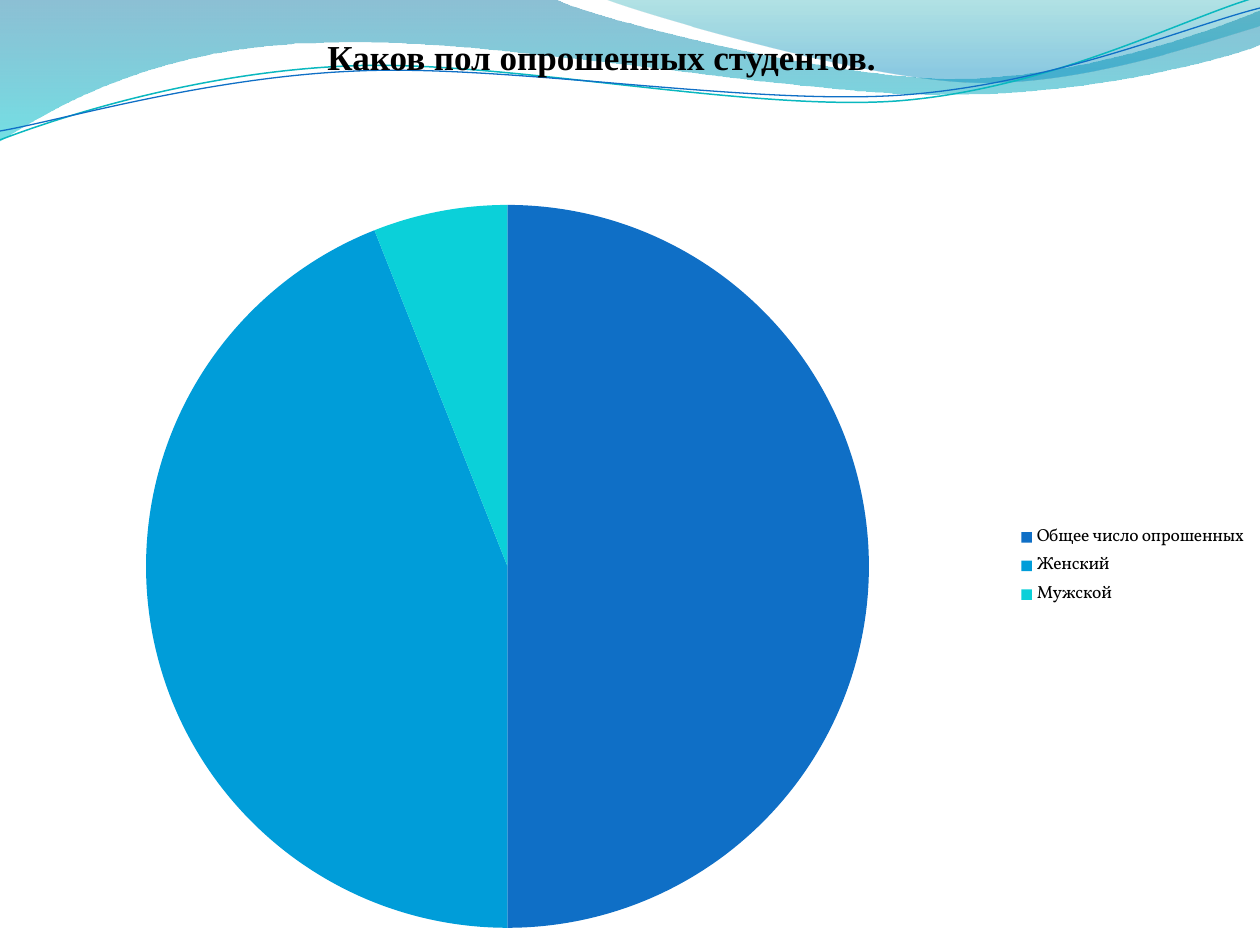
import math

from lxml import etree
from pptx import Presentation
from pptx import util as u
from pptx.chart.data import CategoryChartData
from pptx.dml.color import RGBColor
from pptx.enum import chart as ch, text
from pptx.oxml import parse_xml
from pptx.oxml.ns import nsdecls, qn

PX = 914400 // 126
TILT = -2.7
THEME = {
    "title": {"name": "Times New Roman", "size": u.Pt(20), "bold": True},
    "legend": {"name": "Vollkorn", "size": u.Pt(10)},
    "text": RGBColor.from_string("000000"),
    "slices": ["0F6FC6", "009DD9", "0BD0D9"],
    # gradient stops: position, colour, opacity in percent
    "back_wave": [(0, "0074A1", 45), (1, "00C6CF", 55)],
    "front_wave": [(0, "00A1A9", 30), (0.8, "008BBF", 45)],
    "teal_line": ("0AB8BF", 0.85),
    "blue_line": ("0F6FC6", 0.75),
}


def add_outline(start, segments, close):
    """Draw a run of straight (x, y) and cubic (x1, y1, x2, y2, x, y) segments."""
    # tenths of a pixel keep turned points accurate
    points = [(round(seg[i] * 10), round(seg[i + 1] * 10))
              for seg in [start, *segments] for i in range(0, len(seg), 2)]
    builder = s.shapes.build_freeform(*points[0], scale=PX / 10)
    builder.add_line_segments(points[1:], close=close)
    sp = builder.convert_to_shape()
    sp.shadow.inherit = False

    # Each cubic takes its three points from three straight steps
    steps = iter(list(sp.element.spPr.iter(qn("a:lnTo"))))
    for seg in segments:
        step = next(steps)
        if len(seg) == 6:
            step.addprevious(curve := etree.Element(qn("a:cubicBezTo")))
            for part in (step, next(steps), next(steps)):
                curve.append(part[0])
                part.getparent().remove(part)
    return sp


def turn(points, center, degrees):
    """Turn a flat x, y, x, y... tuple clockwise about center."""
    cos, sin = math.cos(math.radians(degrees)), math.sin(math.radians(degrees))
    turned = []
    for x, y in zip(points[::2], points[1::2]):
        dx, dy = x - center[0], y - center[1]
        turned += [center[0] + dx * cos - dy * sin, center[1] + dx * sin + dy * cos]
    return tuple(turned)


prs = Presentation()
prs.slide_width, prs.slide_height = 1260 * PX, 945 * PX
s = prs.slides.add_slide(prs.slide_layouts[6])

# Filled waves along the top
waves = [
    ("back_wave", (-1, 0), [
        (554, -1), (600, 21, 837, 79, 955, 79), (1074, 79, 1207, 33, 1260, 11),
        (1261, 45), (1239, 55, 1096, 96, 940, 95), (784, 95, 481, 35, 324, 43),
        (163, 45, 58, 105, -1, 142), (-1, 0)]),
    ("front_wave", (604, -1), [
        (641, 14, 859, 78, 969, 82), (1079, 87, 1211, 40, 1260, 26), (1260, 0),
        (604, -1)]),
]
for name, start, segments in waves:
    sp = add_outline(start, segments, close=True)
    sp.line.fill.background()
    sp.fill.gradient()
    sp.fill.gradient_angle = 270
    colors = list(sp.element.spPr.iter(qn("a:gs")))
    for stop, gs, (position, color, opacity) in zip(sp.fill.gradient_stops, colors, THEME[name]):
        stop.position = position
        stop.color.rgb = RGBColor.from_string(color)
        etree.SubElement(gs[0], qn("a:alpha"), val=str(opacity * 1000))

# Thin lines across the waves, drawn level and then tilted
lines = [
    ("teal_line", (629, 72), (0, 140), [
        (60, 117, 199, 72, 349, 66), (498, 59, 747, 112, 898, 101),
        (1050, 89, 1182, 19, 1257, -3)]),
    ("blue_line", (629, 74), (0, 131), [
        (59, 121, 207, 77, 357, 71), (508, 64, 752, 106, 903, 95),
        (1053, 84, 1188, 26, 1260, 8)]),
]
for name, center, start, segments in lines:
    level = [turn(seg, center, -TILT) for seg in [start, *segments]]
    sp = add_outline(level[0], level[1:], close=False)
    sp.rotation = TILT
    color, width = THEME[name]
    sp.fill.background()
    sp.line.color.rgb = RGBColor.from_string(color)
    sp.line.width = u.Pt(width)

# Pie chart
data = CategoryChartData()
data.categories = ["Общее число опрошенных", "Женский", "Мужской"]
data.add_series("Series 1", (50, 44, 6))
chart = s.shapes.add_chart(ch.XL_CHART_TYPE.PIE, 0, 187 * PX, 1260 * PX, 758 * PX, data).chart
chart.has_title = False
chart.has_legend = True
chart.legend.position = ch.XL_LEGEND_POSITION.RIGHT
chart.legend.include_in_layout = True
for key, value in THEME["legend"].items():
    setattr(chart.font, key, value)
chart.font.color.rgb = THEME["text"]
plot = chart.plots[0]
plot.vary_by_categories = True
for i, color in enumerate(THEME["slices"]):
    fill = plot.series[0].points[i].format.fill
    fill.solid()
    fill.fore_color.rgb = RGBColor.from_string(color)

# Pie at the left, leaving room for the legend
area = chart.element.find(".//" + qn("c:plotArea"))
for old in area.findall(qn("c:layout")):
    area.remove(old)
sizes = {"x": 146 / 1260, "y": 18 / 758, "w": 723 / 1260, "h": 723 / 758}
modes = '<c:layoutTarget val="inner"/><c:xMode val="edge"/><c:yMode val="edge"/>'
values = "".join(f'<c:{key} val="{value:.4f}"/>' for key, value in sizes.items())
area.insert(0, parse_xml(
    f'<c:layout {nsdecls("c")}><c:manualLayout>{modes}{values}</c:manualLayout></c:layout>'))

# Title
tf = s.shapes.add_textbox(315 * PX, 29 * PX, 578 * PX, 55 * PX).text_frame
tf.word_wrap = False
tf.auto_size = text.MSO_AUTO_SIZE.SHAPE_TO_FIT_TEXT
r = tf.paragraphs[0].add_run()
r.text = "Каков пол опрошенных студентов."
for key, value in THEME["title"].items():
    setattr(r.font, key, value)
r.font.color.rgb = THEME["text"]

prs.save("out.pptx")
